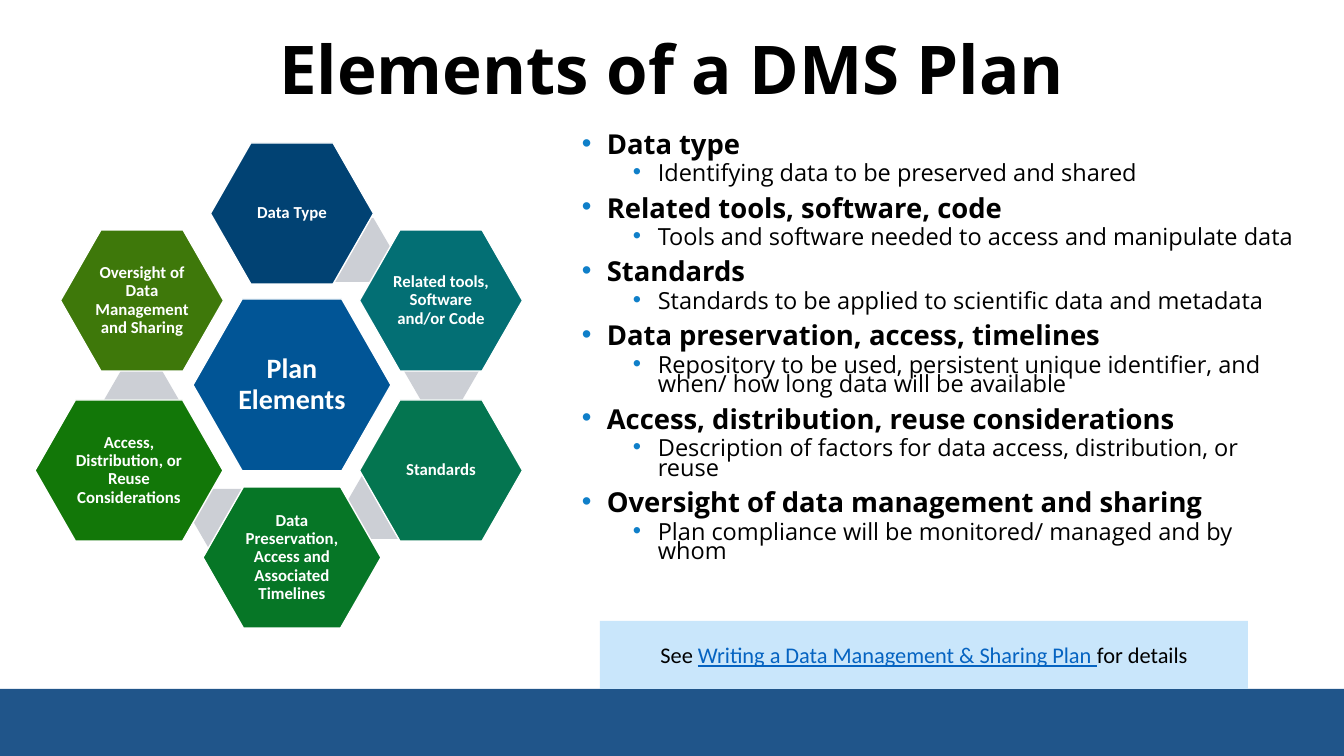
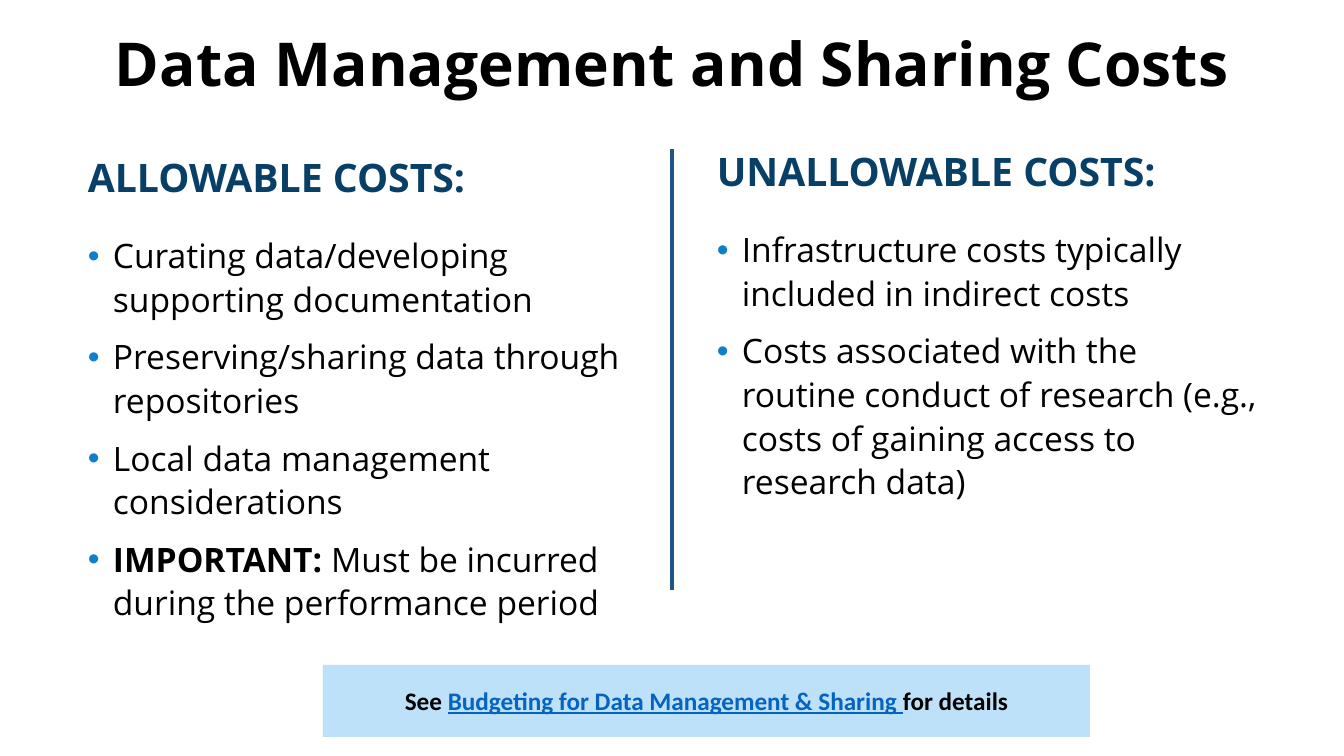
import pptx
import pptx.util
import pptx.dml.color
import pptx.enum.shapes
import pptx.enum.text
import pptx.oxml
import pptx.oxml.ns
from lxml import etree

# Content
PLAN = [
    ("Data type", "Identifying data to be preserved and shared"),
    ("Related tools, software, code",
     "Tools and software needed to access and manipulate data"),
    ("Standards", "Standards to be applied to scientific data and metadata"),
    ("Data preservation, access, timelines",
     "Repository to be used, persistent unique identifier, and when/ how long "
     "data will be available"),
    ("Access, distribution, reuse considerations",
     "Description of factors for data access, distribution, or reuse"),
    ("Oversight of data management and sharing",
     "Plan compliance will be monitored/ managed and by whom"),
]
HUB = ("Plan Elements", "015596", 292, 299, 198)
# text, fill, centre x, top, width
RING = [
    ("Data Type", "014273", 292, 143, 163),
    ("Related tools, Software and/or Code", "036F74", 441, 230, 163),
    ("Standards", "047550", 441, 400, 163),
    ("Data Preservation, Access and Associated Timelines", "067626", 292, 487, 178),
    ("Access, Distribution, or Reuse Considerations", "127708", 129, 400, 188),
    ("Oversight of Data Management and Sharing", "3E780A", 142, 230, 163),
]
# left and top of the piece that joins each element to the next
JOINTS = [(317, 218), (404, 339), (344, 475), (193, 489), (104, 368)]

COSTS = [
    (78, 154, 595, "ALLOWABLE COSTS:", [
        [("Curating data/developing supporting documentation", {})],
        [("Preserving/sharing data through repositories", {})],
        [("Local data management considerations", {})],
        [("IMPORTANT: ", {"bold": True}),
         ("Must be incurred during the performance period", {})],
    ]),
    (707, 148, 560, "UNALLOWABLE COSTS:", [
        [("Infrastructure costs typically included in indirect costs", {})],
        [("Costs associated with the routine conduct of research (e.g., costs "
          "of gaining access to research data)", {})],
    ]),
]

# Shared style
SCALE = 914400 / 100.8
HEAD, BODY = "Open Sans", "Calibri"
BLACK, WHITE, NAVY, BLUE = "000000", "FFFFFF", "073F67", "20558A"
DOT, LINK, GREY = "0F7FC9", "0563C1", "CCCFD5"
PALE, SKY = "C9E6FB", "93CEF7"
SHAPE = pptx.enum.shapes.MSO_SHAPE
ANCHOR = pptx.enum.text.MSO_ANCHOR
CENTER = pptx.enum.text.PP_ALIGN.CENTER


def px(n):
    return pptx.util.Emu(round(n * SCALE))


def rgb(code):
    return pptx.dml.color.RGBColor.from_string(code)


def bullet(para, left):
    props = para._p.get_or_add_pPr()
    props.set("marL", str(px(left)))
    props.set("indent", str(-px(25)))
    ns = pptx.oxml.ns.nsdecls("a")
    for xml in (f'<a:buClr {ns}><a:srgbClr val="{DOT}"/></a:buClr>',
                f'<a:buFont {ns} typeface="Arial"/>',
                f'<a:buChar {ns} char="•"/>'):
        props.append(pptx.oxml.parse_xml(xml))


def write(frame, runs, size, face=HEAD, color=BLACK, bold=False, align=None,
          lead=None, before=0, after=0, dot=None):
    """Add one paragraph; runs is a string or a list of (text, style)."""
    para = frame.paragraphs[0]
    if para.runs:
        para = frame.add_paragraph()
        para.space_before = pptx.util.Pt(before)
    if dot:
        bullet(para, dot)
    if lead:
        para.line_spacing = lead
    if after:
        para.space_after = pptx.util.Pt(after)
    if align:
        para.alignment = align
    font = para.font
    font.name, font.size, font.bold = face, pptx.util.Pt(size), bold
    font.color.rgb = rgb(color)
    for text, style in [(runs, {})] if isinstance(runs, str) else runs:
        run = para.add_run()
        run.text = text
        if "bold" in style:
            run.font.bold = style["bold"]
        if "color" in style:
            run.font.color.rgb = rgb(style["color"])
            run.font.underline = True


def box(slide, left, top, wide, high):
    frame = slide.shapes.add_textbox(px(left), px(top), px(wide), px(high)).text_frame
    frame.word_wrap = True
    return frame


def title(slide, text, size, top):
    frame = box(slide, 92, top, 1160, 146)
    frame.vertical_anchor = ANCHOR.MIDDLE
    write(frame, text, size, bold=True, align=CENTER, lead=0.9)


def solid(slide, kind, left, top, wide, high, fill, edge=None):
    shape = slide.shapes.add_shape(kind, px(left), px(top), px(wide), px(high))
    shape.shadow.inherit = False
    shape.fill.solid()
    shape.fill.fore_color.rgb = rgb(fill)
    if edge:
        shape.line.color.rgb = rgb(edge)
        shape.line.width = pptx.util.Pt(1)
    else:
        shape.line.fill.background()
    return shape


def cell(slide, text, fill, mid, top, wide, high=141, size=12, pad=2):
    """Draw a labelled hexagon centred on mid."""
    shape = solid(slide, SHAPE.HEXAGON, mid - wide / 2, top, wide, high, fill, WHITE)
    shape.adjustments[0] = 0.286
    frame = shape.text_frame
    frame.word_wrap = True
    frame.vertical_anchor = ANCHOR.MIDDLE
    frame.margin_left = frame.margin_right = px(pad)
    frame.margin_top = frame.margin_bottom = px(pad)
    write(frame, text, size, BODY, WHITE, True, CENTER, 0.9)


def note(slide, left, top, wide, high, fill, link, size, bold=False):
    shape = solid(slide, SHAPE.RECTANGLE, left, top, wide, high, fill)
    frame = shape.text_frame
    frame.word_wrap = True
    frame.vertical_anchor = ANCHOR.TOP
    frame.margin_top = frame.margin_bottom = px(20)
    runs = [("See ", {}), (link, {"color": LINK}), ("for details", {})]
    write(frame, runs, size, BODY, bold=bold, align=CENTER)
    return shape


def plan(slide):
    solid(slide, SHAPE.RECTANGLE, 0, 689, 1344, 67, BLUE)
    title(slide, "Elements of a DMS Plan", 48, 0)

    # Hexagon ring
    cell(slide, *HUB, high=172, size=20, pad=3)
    for i, item in enumerate(RING):
        if i < len(JOINTS):
            joint = solid(slide, SHAPE.HEXAGON, *JOINTS[i], 75, 64, GREY)
            joint.adjustments[0] = 0.289
        cell(slide, *item)

    # Outline
    frame = box(slide, 572, 131, 734, 485)
    for head, text in PLAN:
        write(frame, head, 19.6, bold=True, lead=0.7, before=10, dot=25)
        write(frame, text, 16.8, lead=0.7, before=5, dot=76)
    note(slide, 600, 621, 648, 68, PALE,
         "Writing a Data Management & Sharing Plan ", 16)


def costs(slide):
    title(slide, "Data Management and Sharing Costs", 43.2, -6)

    # Two columns and the rule between them
    for left, top, wide, head, items in COSTS:
        frame = box(slide, left, top, wide, 539)
        write(frame, head, 28, color=NAVY, bold=True, lead=0.9, after=12)
        for runs in items:
            write(frame, runs, 24, lead=1.08, before=10, dot=25)
    rule = slide.shapes.add_connector(
        pptx.enum.shapes.MSO_CONNECTOR.STRAIGHT, px(672), px(149), px(672), px(590))
    rule.line.color.rgb = rgb(BLUE)
    rule.line.width = pptx.util.Pt(3)
    etree.SubElement(rule._element.spPr, pptx.oxml.ns.qn("a:effectLst"))

    # Translucent note
    shape = note(slide, 323, 665, 767, 72, SKY,
                 "Budgeting for Data Management & Sharing ", 18, True)
    tint = shape._element.spPr.find(".//" + pptx.oxml.ns.qn("a:srgbClr"))
    etree.SubElement(tint, pptx.oxml.ns.qn("a:alpha"), val="60000")


def main():
    deck = pptx.Presentation()
    deck.slide_width, deck.slide_height = px(1344), px(756)
    for draw in (plan, costs):
        draw(deck.slides.add_slide(deck.slide_layouts[6]))
    deck.save("out.pptx")


if __name__ == "__main__":
    main()
